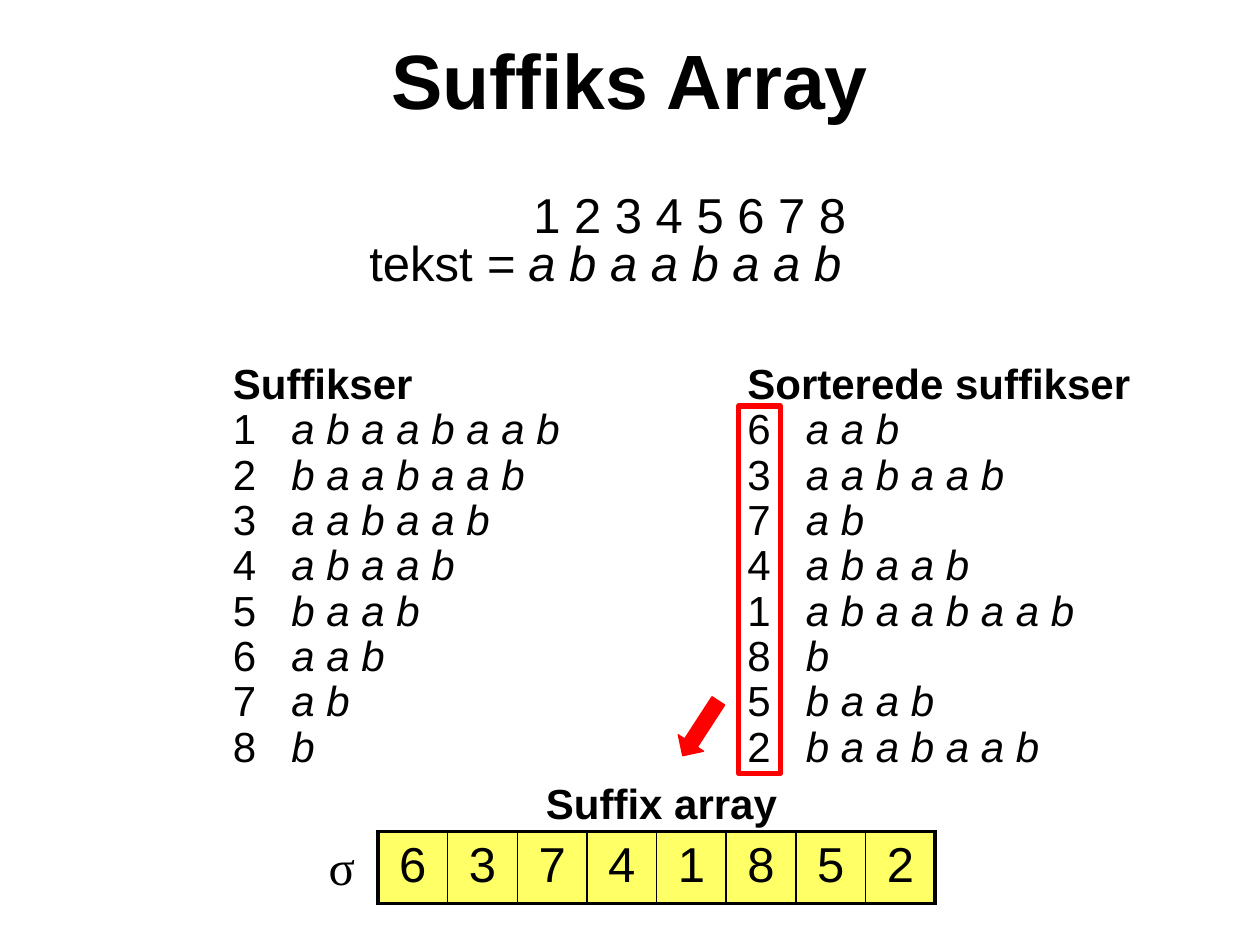
from lxml.etree import SubElement
from pptx import Presentation
from pptx.dml.color import RGBColor
from pptx.enum.shapes import MSO_SHAPE
from pptx.enum.text import MSO_ANCHOR, PP_ALIGN
from pptx.oxml.ns import qn
from pptx.util import Pt

COLORS = {"text": "000000", "cell": "FFFF66", "mark": "FF0000"}
TEXT = "abaabaab"
SUFFIXES = [(start + 1, TEXT[start:]) for start in range(len(TEXT))]
SORTED_SUFFIXES = sorted(SUFFIXES, key=lambda pair: pair[1])
LISTS = [
    ("Suffikser", SUFFIXES, (126, 204, 204, 234)),
    ("Sorterede suffikser", SORTED_SUFFIXES, (420, 204, 264, 240)),
]
DIGIT_INDENT = 93.7
SUFFIX_INDENT = 33.4
TABLE_LEFT, TABLE_TOP, CELL_WIDTH, CELL_HEIGHT = 216, 475.2, 39.8, 41
OUTER, INNER = 2.25, 1


def color(name):
    return RGBColor.from_string(COLORS[name])


def spaced(items):
    return " ".join(str(item) for item in items)


def add_span(para, text, size, bold=False, italic=False, font="Arial"):
    span = para.add_run()
    span.text = text
    span.font.size = Pt(size)
    span.font.name = font
    span.font.bold = bold
    span.font.italic = italic
    span.font.color.rgb = color("text")


def add_box(page, place, align=PP_ALIGN.LEFT, anchor=MSO_ANCHOR.TOP):
    """Return the text frame of a new wrapping text box."""
    frame = page.shapes.add_textbox(*map(Pt, place)).text_frame
    frame.word_wrap = True
    frame.vertical_anchor = anchor
    frame.paragraphs[0].alignment = align
    return frame


def hang(para, indent, first=0):
    properties = para._p.get_or_add_pPr()
    properties.set("marL", str(Pt(indent)))
    properties.set("indent", str(Pt(first)))


def add_suffix_list(page, heading, suffixes, place):
    frame = add_box(page, place)
    add_span(frame.paragraphs[0], heading, 24, bold=True)
    for number, suffix in suffixes:
        para = frame.add_paragraph()
        hang(para, SUFFIX_INDENT, -SUFFIX_INDENT)
        add_span(para, f"{number}\t", 24)
        add_span(para, spaced(suffix), 24, italic=True)
    for para in frame.paragraphs:
        para.line_spacing = 0.9


def set_border(cell, side, width):
    line = SubElement(cell._tc.get_or_add_tcPr(), qn(f"a:{side}"), w=str(Pt(width)))
    fill = SubElement(line, qn("a:solidFill"))
    SubElement(fill, qn("a:srgbClr"), val=COLORS["text"])


def add_array(page, values):
    count = len(values)
    table = page.shapes.add_table(
        1, count, Pt(TABLE_LEFT), Pt(TABLE_TOP), Pt(CELL_WIDTH * count), Pt(CELL_HEIGHT)
    ).table
    for index, value in enumerate(values):
        table.columns[index].width = Pt(CELL_WIDTH)
        cell = table.cell(0, index)
        set_border(cell, "lnL", OUTER if index == 0 else INNER)
        set_border(cell, "lnR", OUTER if index == count - 1 else INNER)
        set_border(cell, "lnT", OUTER)
        set_border(cell, "lnB", OUTER)
        cell.fill.solid()
        cell.fill.fore_color.rgb = color("cell")
        para = cell.text_frame.paragraphs[0]
        para.alignment = PP_ALIGN.CENTER
        add_span(para, str(value), 28)


def add_mark(page, kind, place, width):
    shape = page.shapes.add_shape(kind, *map(Pt, place))
    shape.shadow.inherit = False
    shape.fill.background()
    shape.line.color.rgb = color("mark")
    shape.line.width = Pt(width)
    return shape


def main():
    deck = Presentation()
    deck.slide_width, deck.slide_height = Pt(720), Pt(540)
    page = deck.slides.add_slide(deck.slide_layouts[6])

    title = add_box(page, (36, 0, 648, 90), PP_ALIGN.CENTER, MSO_ANCHOR.MIDDLE)
    add_span(title.paragraphs[0], "Suffiks Array", 44, bold=True)

    example = add_box(page, (204, 102, 318, 72))
    positions = example.paragraphs[0]
    hang(positions, DIGIT_INDENT)
    positions.space_before = Pt(3.5)
    add_span(positions, spaced(range(1, len(TEXT) + 1)), 28)
    letters = example.add_paragraph()
    letters.line_spacing = 0.8
    add_span(letters, "tekst", 28)
    add_span(letters, f" = {spaced(TEXT)}", 28, italic=True)

    for heading, suffixes, place in LISTS:
        add_suffix_list(page, heading, suffixes, place)

    add_array(page, [number for number, _ in SORTED_SUFFIXES])
    caption = add_box(page, (246, 444, 264, 30), PP_ALIGN.CENTER).paragraphs[0]
    caption.line_spacing = 0.9
    add_span(caption, "Suffix array", 24, bold=True)

    add_mark(page, MSO_SHAPE.RECTANGLE, (422, 232, 24, 210), 3)
    arrow = add_mark(page, MSO_SHAPE.RIGHT_ARROW, (381.6, 407.5, 37.4, 17.3), 0.75)
    arrow.fill.solid()
    arrow.fill.fore_color.rgb = color("mark")
    arrow.rotation = 123

    sigma = add_box(page, (126, 474.5, 84, 41), PP_ALIGN.RIGHT).paragraphs[0]
    add_span(sigma, "σ", 28, font="Times New Roman")

    deck.save("out.pptx")


if __name__ == "__main__":
    main()
